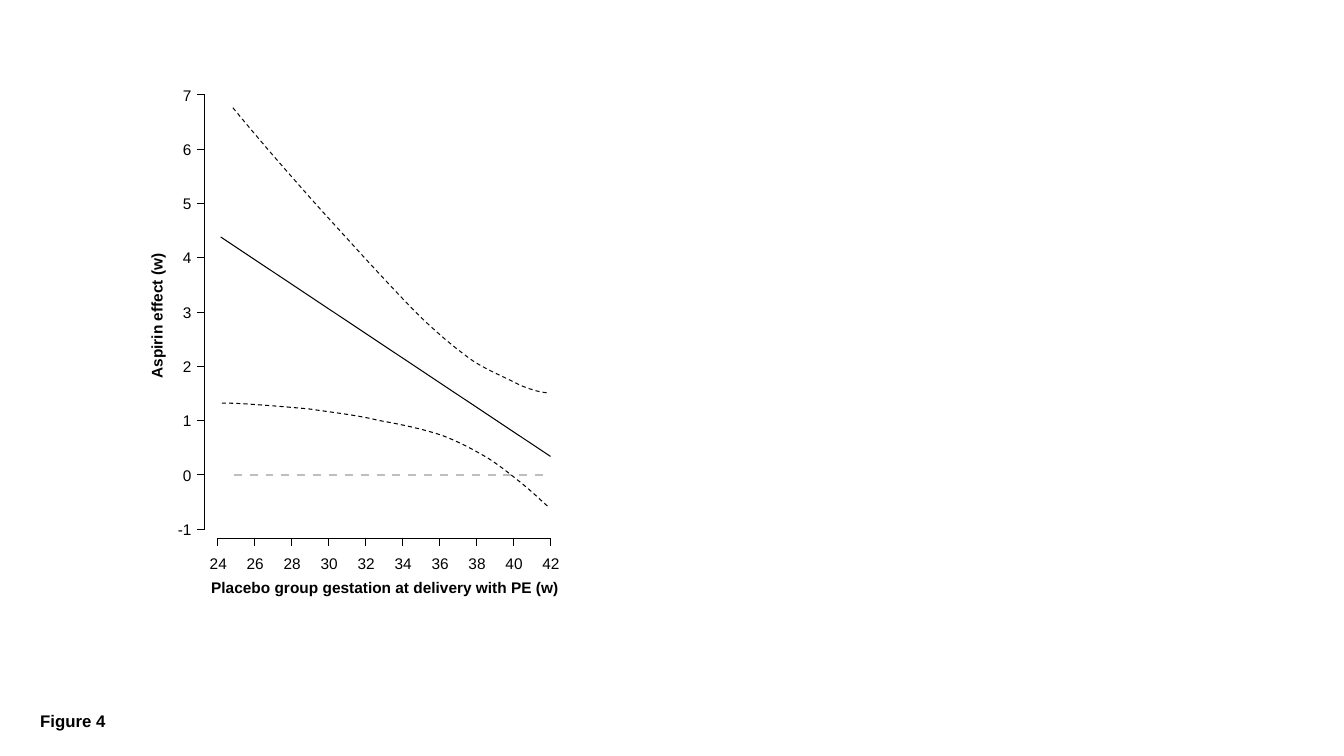
"""Build the line chart of aspirin effect against gestation at delivery."""
from lxml.etree import SubElement
from pptx import Presentation
from pptx.dml.color import RGBColor
from pptx.enum.dml import MSO_LINE
from pptx.enum.shapes import MSO_CONNECTOR
from pptx.enum.text import MSO_AUTO_SIZE, PP_ALIGN
from pptx.oxml.ns import qn
from pptx.util import Inches, Pt

presentation = Presentation()
presentation.slide_width = Inches(13.33)
presentation.slide_height = Inches(7.5)
slide = presentation.slides.add_slide(presentation.slide_layouts[6])

first_week, last_week = 24, 42
lowest_effect, highest_effect = -1, 7
plot_left, plot_right = Inches(2.16), Inches(5.46)
plot_top, plot_bottom = Inches(0.94), Inches(5.25)
column = (plot_right - plot_left) / (last_week - first_week)
row = (plot_bottom - plot_top) / (highest_effect - lowest_effect)
effect_axis, week_axis = Inches(2.03), Inches(5.34)
tick = Inches(0.08)
no_margins = dict.fromkeys(("margin_left", "margin_right", "margin_top", "margin_bottom"), 0)


def add_text(text, left, top, width, height, alignment, frame_format, **font_format):
    box = slide.shapes.add_textbox(int(left), int(top), int(width), int(height))
    frame = box.text_frame
    for name, value in frame_format.items():
        setattr(frame, name, value)
    frame.auto_size = MSO_AUTO_SIZE.SHAPE_TO_FIT_TEXT
    paragraph = frame.paragraphs[0]
    paragraph.alignment = alignment
    run = paragraph.add_run()
    run.text = text
    run.font.color.rgb = RGBColor.from_string("000000")
    for name, value in {"name": "Arial", "size": Pt(11), **font_format}.items():
        setattr(run.font, name, value)
    return box


def style_line(shape, color="000000", **line_format):
    shape.line.color.rgb = RGBColor.from_string(color)
    for name, value in line_format.items():
        setattr(shape.line, name, value)
    SubElement(shape._element.spPr, qn("a:effectLst"))


label_format = {"word_wrap": False, **no_margins}
add_text("Figure 4", Inches(0.3), Inches(7), Inches(1.15), Inches(0.3),
         PP_ALIGN.LEFT, {"word_wrap": True}, size=Pt(12), bold=True)
add_text("Placebo group gestation at delivery with PE (w)", Inches(2.09), Inches(5.74),
         Inches(3.46), Inches(0.24), PP_ALIGN.CENTER, label_format, bold=True)
effect_title = add_text("Aspirin effect (w)", Inches(0.93), Inches(3.04), Inches(1.25),
                        Inches(0.19), PP_ALIGN.CENTER, label_format, bold=True)
effect_title.rotation = 270

axis_lines = [(effect_axis, plot_bottom, effect_axis, plot_top),
              (plot_left, week_axis, plot_right, week_axis)]
for effect in range(lowest_effect, highest_effect + 1):
    y = plot_top + (highest_effect - effect) * row
    axis_lines.append((effect_axis, y, effect_axis - tick, y))
    add_text(str(effect), Inches(1.75), y - Inches(0.09), Inches(0.15), Inches(0.19),
             PP_ALIGN.RIGHT, label_format)
for week in range(first_week, last_week + 1, 2):
    x = plot_left + (week - first_week) * column
    axis_lines.append((x, week_axis, x, week_axis + tick))
    add_text(str(week), x - Inches(0.12), Inches(5.5), Inches(0.25), Inches(0.24),
             PP_ALIGN.CENTER, label_format)
for ends in axis_lines:
    connector = slide.shapes.add_connector(MSO_CONNECTOR.STRAIGHT, *map(int, ends))
    style_line(connector, width=Pt(0.63))

zero_y = plot_top + highest_effect * row
dash_starts = [plot_left + (0.87 + 0.858 * dash) * column for dash in range(20)]
builder = slide.shapes.build_freeform(int(dash_starts[0]), int(zero_y))
for start in dash_starts:
    builder.move_to(int(start), int(zero_y))
    builder.add_line_segments([(int(start + 0.43 * column), int(zero_y))], close=False)
zero_line = builder.convert_to_shape()
zero_line.fill.background()
style_line(zero_line, "BEBEBE", width=Pt(1.38))

mean_ends = [(24.16, 4.38), (42, 0.34)]
mean_points = [int(length) for week, effect in mean_ends for length in
               (plot_left + (week - first_week) * column,
                plot_top + (highest_effect - effect) * row)]
mean_line = slide.shapes.add_connector(MSO_CONNECTOR.STRAIGHT, *mean_points)
style_line(mean_line, width=Pt(0.75))

upper_limit = [
    (24.82, 6.76), (25.96, 6.29), (27.11, 5.83), (28.31, 5.37), (29.51, 4.9),
    (30.82, 4.42), (31.96, 3.99), (33.11, 3.57), (34.25, 3.14), (35.24, 2.82),
    (36.22, 2.51), (36.98, 2.3), (37.8, 2.1), (38.67, 1.91), (39.71, 1.77),
    (40.36, 1.65), (41.02, 1.56), (41.45, 1.52), (41.84, 1.51)]
lower_limit = [
    (24.22, 1.32), (24.6, 1.32), (24.98, 1.32), (25.8, 1.3), (26.62, 1.28),
    (27.82, 1.25), (29.02, 1.21), (30.16, 1.15), (31.58, 1.1), (32.73, 1),
    (33.93, 0.93), (35.13, 0.84), (36.11, 0.73), (37.04, 0.61), (37.8, 0.47),
    (38.56, 0.32), (39.27, 0.17), (39.98, -0.03), (40.53, -0.18), (41.07, -0.33),
    (41.45, -0.46), (41.89, -0.59)]
curve_steps = 8
for limit, color in ((upper_limit, "0D0D0D"), (lower_limit, "000000")):
    controls = [(plot_left + (week - first_week) * column,
                 plot_top + (highest_effect - effect) * row) for week, effect in limit]
    points = []
    for index in range(0, len(controls) - 1, 3):
        for step in range(1, curve_steps + 1):
            t = step / curve_steps
            weights = ((1 - t) ** 3, 3 * t * (1 - t) ** 2, 3 * t ** 2 * (1 - t), t ** 3)
            points.append(tuple(
                int(sum(weight * control[axis] for weight, control
                        in zip(weights, controls[index:index + 4])))
                for axis in (0, 1)))
    builder = slide.shapes.build_freeform(*map(int, controls[0]))
    builder.add_line_segments(points, close=False)
    curve = builder.convert_to_shape()
    curve.fill.background()
    style_line(curve, color, width=Pt(0.75), dash_style=MSO_LINE.DASH)

presentation.save("out.pptx")
